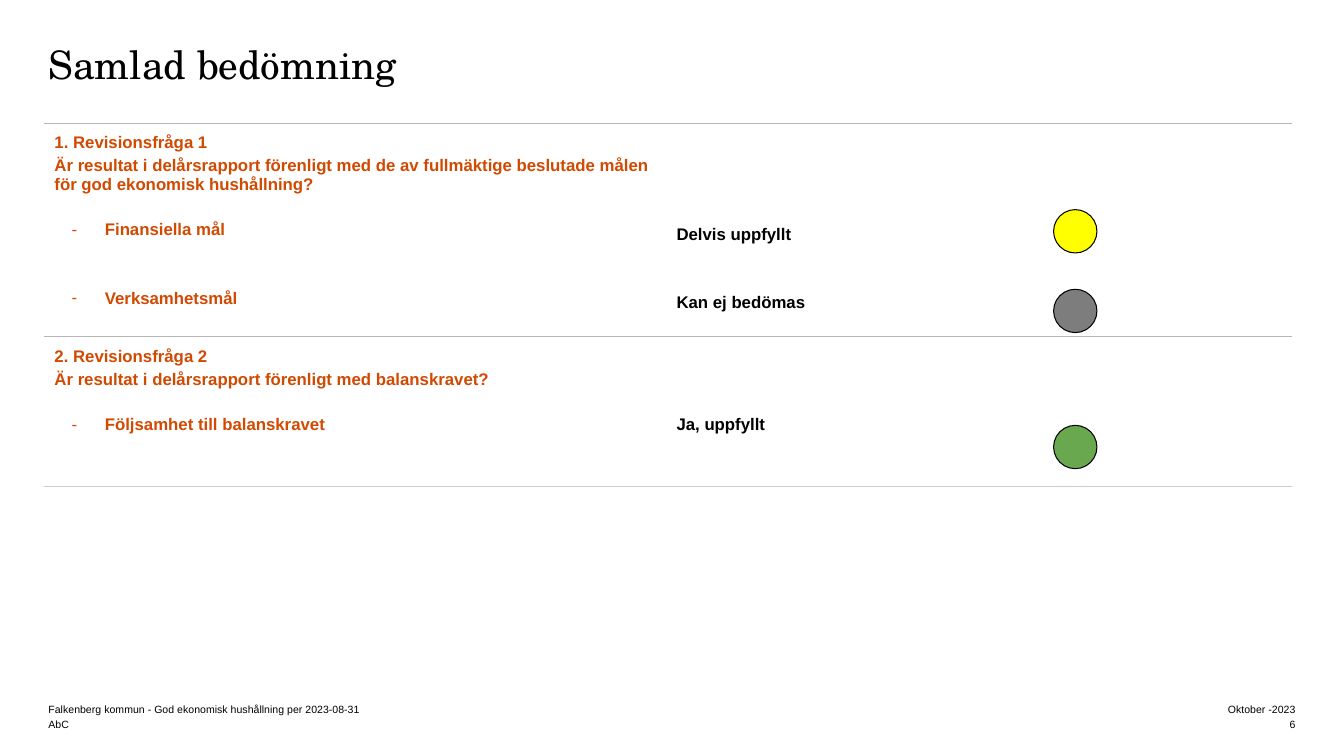
from lxml import etree
from pptx import Presentation
from pptx import util as u
from pptx.dml.color import RGBColor
from pptx.enum import shapes, text
from pptx.oxml import ns

BLACK = RGBColor(0x00, 0x00, 0x00)
ORANGE = RGBColor(0xD0, 0x4A, 0x02)
YELLOW = RGBColor(0xFF, 0xFF, 0x00)
GREY = RGBColor(0x7D, 0x7D, 0x7D)
GREEN = RGBColor(0x6A, 0xA8, 0x4F)
RULE = RGBColor(0xB7, 0xB7, 0xB7)
PALE_RULE = RGBColor(0xCC, 0xCC, 0xCC)


def add_element(parent, tag, **attributes):
    return etree.SubElement(parent, ns.qn(tag), attributes)


def write(paragraph, words, font="Arial", size=12, color=BLACK, bold=False,
          align=None, before=0, line_spacing=None, dash=False):
    """Put formatted text in a paragraph, optionally as a dashed list item."""
    run = paragraph.add_run()
    run.text = words
    run.font.name = font
    run.font.size = u.Pt(size)
    run.font.bold = bold
    run.font.color.rgb = color
    paragraph.alignment = align
    paragraph.space_before = u.Pt(before)
    if line_spacing:
        paragraph.line_spacing = line_spacing
    if dash:
        properties = paragraph._p.get_or_add_pPr()
        properties.set("marL", str(u.Inches(0.5)))
        properties.set("indent", str(u.Inches(-0.33)))
        bullet_color = add_element(properties, "a:buClr")
        add_element(bullet_color, "a:srgbClr", val=str(color))
        add_element(properties, "a:buFont", typeface=font)
        add_element(properties, "a:buChar", char="-")


class SlideBuilder:
    def __init__(self, slide):
        self.slide = slide

    def prepare_frame(self, frame, anchor):
        frame.margin_left = frame.margin_right = 0
        frame.margin_top = frame.margin_bottom = 0
        frame.word_wrap = True
        frame.auto_size = text.MSO_AUTO_SIZE.NONE
        frame.vertical_anchor = anchor

    def title(self, words, left, top, width, height):
        title = self.slide.shapes.title
        title.left, title.top = u.Inches(left), u.Inches(top)
        title.width, title.height = u.Inches(width), u.Inches(height)
        self.prepare_frame(title.text_frame, text.MSO_ANCHOR.TOP)
        write(title.text_frame.paragraphs[0], words, font="TeX Gyre Schola",
              size=28, line_spacing=0.85, align=text.PP_ALIGN.LEFT)

    def footer(self, words, left, top, width, align):
        box = self.slide.shapes.add_textbox(
            u.Inches(left), u.Inches(top), u.Inches(width), u.Inches(0.15))
        self.prepare_frame(box.text_frame, text.MSO_ANCHOR.BOTTOM)
        write(box.text_frame.paragraphs[0], words, size=7.5, align=align)

    def table(self, left, top, widths, heights):
        frame = self.slide.shapes.add_table(
            len(heights), len(widths), u.Inches(left), u.Inches(top),
            u.Inches(sum(widths)), u.Inches(sum(heights)))
        table = frame.table
        table.first_row = table.horz_banding = False
        for column, width in zip(table.columns, widths):
            column.width = u.Inches(width)
        for row, height in zip(table.rows, heights):
            row.height = u.Inches(height)
        return table

    def cell(self, cell, entries, first_line, bottom_rule):
        cell.margin_left = cell.margin_right = cell.margin_bottom = u.Inches(0.1)
        cell.margin_top = u.Inches(first_line)
        cell.fill.background()
        self.borders(cell, RULE, bottom_rule)
        for index, (words, style) in enumerate(entries):
            frame = cell.text_frame
            paragraph = frame.add_paragraph() if index else frame.paragraphs[0]
            write(paragraph, words, bold=True, **style)

    def borders(self, cell, top, bottom):
        properties = cell._tc.get_or_add_tcPr()
        sides = [("a:lnL", None), ("a:lnR", None), ("a:lnT", top), ("a:lnB", bottom)]
        for index, (tag, color) in enumerate(sides):
            line = add_element(properties, tag, w=str(u.Pt(0.75)))
            if color is None:
                add_element(line, "a:noFill")
            else:
                fill = add_element(line, "a:solidFill")
                add_element(fill, "a:srgbClr", val=str(color))
            properties.insert(index, line)

    def signal(self, top, color):
        circle = self.slide.shapes.add_shape(
            shapes.MSO_SHAPE.OVAL, u.Inches(10.45), u.Inches(top),
            u.Inches(0.43), u.Inches(0.43))
        circle.shadow.inherit = False
        circle.fill.solid()
        circle.fill.fore_color.rgb = color
        circle.line.color.rgb = BLACK
        circle.line.width = u.Pt(0.75)


def main():
    presentation = Presentation()
    presentation.slide_width = u.Inches(13.33)
    presentation.slide_height = u.Inches(7.5)
    builder = SlideBuilder(presentation.slides.add_slide(presentation.slide_layouts[5]))

    # Title
    builder.title("Samlad bedömning", 0.48, 0.47, 12.36, 0.69)

    # Assessment table: each cell has its entries and first-line offset
    heading = {"color": ORANGE}
    question = {"color": ORANGE, "before": 3}
    first_goal = {"color": ORANGE, "before": 19, "dash": True}
    next_goal = {"color": ORANGE, "before": 35.5, "dash": True}
    rows = [
        (RULE, [
            ([("1. Revisionsfråga 1", heading),
              ("Är resultat i delårsrapport förenligt med de av fullmäktige "
               "beslutade målen för god ekonomisk hushållning?", question),
              ("Finansiella mål", first_goal),
              ("Verksamhetsmål", next_goal)], 0.1),
            ([("Delvis uppfyllt", {}), ("Kan ej bedömas", {"before": 35.5})], 1.01),
            ([], 0.1)]),
        (PALE_RULE, [
            ([("2. Revisionsfråga 2", heading),
              ("Är resultat i delårsrapport förenligt med balanskravet?", question),
              ("Följsamhet till balanskravet", first_goal)], 0.1),
            ([("Ja, uppfyllt", {})], 0.78),
            ([], 0.1)]),
    ]
    table = builder.table(0.44, 1.22, widths=[6.17, 2.77, 3.43], heights=[2.12, 1.49])
    for row, (bottom_rule, contents) in enumerate(rows):
        for column, (entries, first_line) in enumerate(contents):
            builder.cell(table.cell(row, column), entries, first_line, bottom_rule)

    # Traffic-light signals
    for top, color in [(2.08, YELLOW), (2.87, GREY), (4.22, GREEN)]:
        builder.signal(top, color)

    # Footer
    left, right = text.PP_ALIGN.LEFT, text.PP_ALIGN.RIGHT
    builder.footer("Falkenberg kommun - God ekonomisk hushållning per 2023-08-31",
                   0.48, 6.95, 5.99, left)
    builder.footer("AbC", 0.48, 7.1, 5.99, left)
    builder.footer("Oktober -2023", 8.99, 6.95, 3.86, right)
    builder.footer("6", 8.99, 7.1, 3.86, right)

    presentation.save("out.pptx")


if __name__ == "__main__":
    main()
